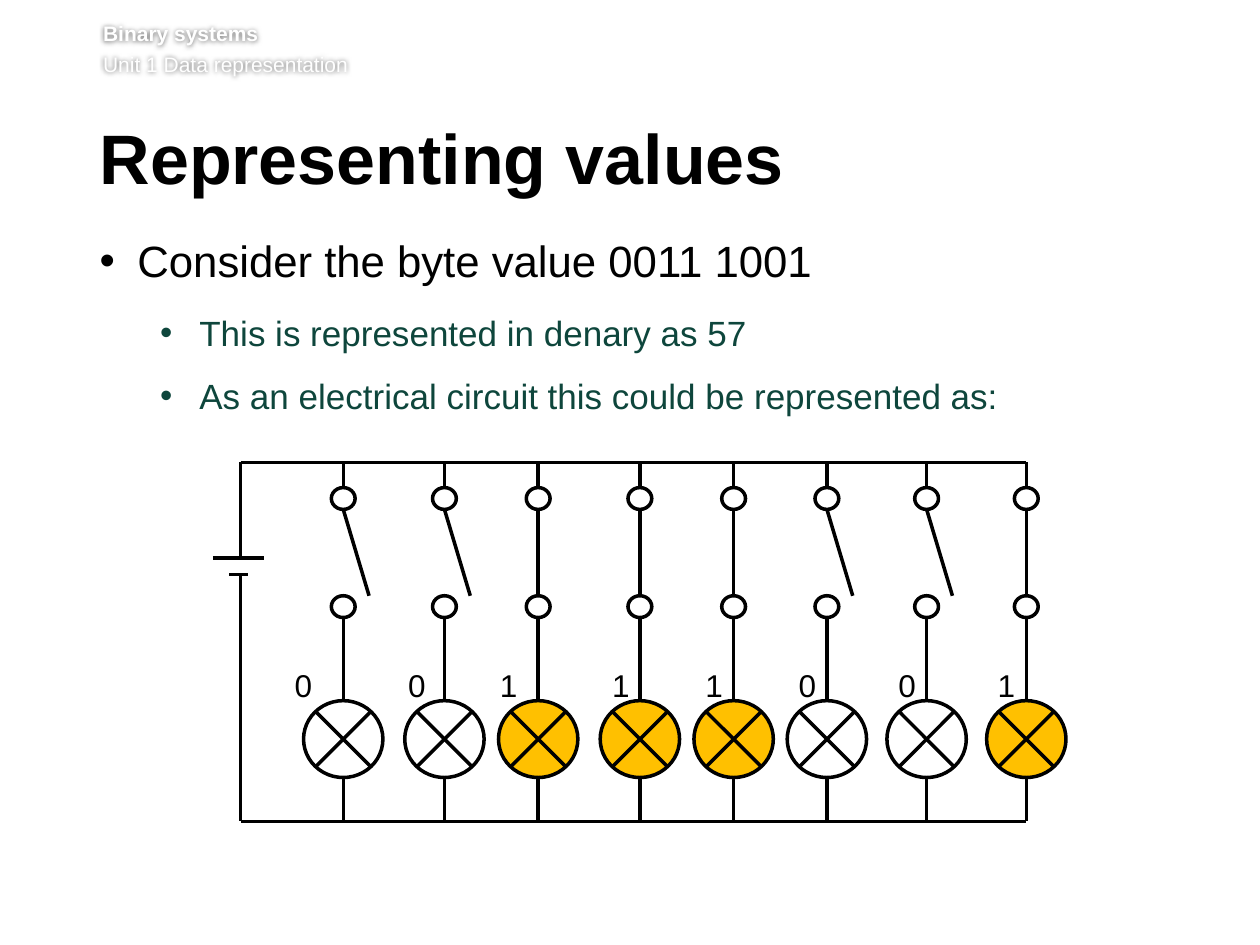
from collections import namedtuple

from lxml import etree
from pptx import Presentation
from pptx.dml.color import RGBColor
from pptx.enum.shapes import MSO_CONNECTOR, MSO_SHAPE
from pptx.enum.text import MSO_ANCHOR
from pptx.oxml import parse_xml
from pptx.oxml.ns import nsdecls, qn
from pptx.util import Cm, Pt

STRAIGHT = MSO_CONNECTOR.STRAIGHT
OVAL = MSO_SHAPE.OVAL
BOTTOM = MSO_ANCHOR.BOTTOM

Theme = namedtuple("Theme", "font black white green lit header title body detail digit line")
theme = Theme(
    font="Arial",
    black=RGBColor(0x00, 0x00, 0x00),
    white=RGBColor(0xFF, 0xFF, 0xFF),
    green=RGBColor(0x0E, 0x46, 0x3C),
    lit=RGBColor(0xFF, 0xC0, 0x00),
    header=Pt(12), title=Pt(40), body=Pt(25), detail=Pt(20), digit=Pt(18), line=Pt(2),
)


def add_run(paragraph, text, size, color, bold=False):
    run = paragraph.add_run()
    run.text = text
    run.font.name = theme.font
    run.font.size = size
    run.font.bold = bold
    run.font.color.rgb = color


def add_wire(x1, y1, x2, y2):
    """Draw a black line in the circuit group, with coordinates in centimetres."""
    wire = circuit.shapes.add_connector(STRAIGHT, Cm(x1), Cm(y1), Cm(x2), Cm(y2))
    wire.line.color.rgb = theme.black
    wire.line.width = theme.line
    etree.SubElement(wire._element.spPr, qn("a:effectLst"))


presentation = Presentation()
presentation.slide_width = Cm(25.4)
presentation.slide_height = Cm(19.05)
slide = presentation.slides.add_slide(presentation.slide_layouts[6])

# Header: white text with a soft dark halo
header = slide.shapes.add_textbox(Cm(2.08), Cm(0.43), Cm(22.4), Cm(1.24))
header.text_frame.word_wrap = True
header.text_frame.vertical_anchor = BOTTOM
header.text_frame.margin_left = header.text_frame.margin_right = 0
header.text_frame.margin_top = 0
header.text_frame.margin_bottom = Cm(0.13)
paragraph = header.text_frame.paragraphs[0]
add_run(paragraph, "Binary systems", theme.header, theme.white, bold=True)
paragraph = header.text_frame.add_paragraph()
paragraph.space_before = Pt(2.9)
add_run(paragraph, "Unit 1 Data representation", theme.header, theme.white)
header._element.spPr.append(parse_xml(
    f'<a:effectLst {nsdecls("a")}><a:outerShdw blurRad="38100" dist="0" dir="0">'
    '<a:srgbClr val="000000"><a:alpha val="60000"/></a:srgbClr>'
    '</a:outerShdw></a:effectLst>'))

# Title
title = slide.shapes.add_textbox(Cm(2.01), Cm(2.51), Cm(21.72), Cm(1.85))
title.text_frame.word_wrap = True
title.text_frame.margin_left = 0
paragraph = title.text_frame.paragraphs[0]
paragraph.line_spacing = Pt(39)
paragraph.space_after = Pt(15)
add_run(paragraph, "Representing values", theme.title, theme.black, bold=True)

# Bullets: text, level, indent, hanging, space after, size, colour
bullets = [
    ("Consider the byte value 0011 1001", 0, 0.76, 0.76, 14, theme.body, theme.black),
    ("This is represented in denary as 57", 1, 2.01, 0.79, 12, theme.detail, theme.green),
    ("As an electrical circuit this could be represented as:",
     1, 2.01, 0.79, 12, theme.detail, theme.green),
]
body = slide.shapes.add_textbox(Cm(2.01), Cm(4.72), Cm(21.67), Cm(9.6))
body.text_frame.word_wrap = True
body.text_frame.margin_left = body.text_frame.margin_top = 0
for index, (text, level, indent, hanging, after, size, color) in enumerate(bullets):
    paragraph = body.text_frame.add_paragraph() if index else body.text_frame.paragraphs[0]
    paragraph.level = level
    paragraph.space_after = Pt(after)
    properties = paragraph._p.get_or_add_pPr()
    properties.set("marL", str(Cm(indent)))
    properties.set("indent", str(-Cm(hanging)))
    etree.SubElement(properties, qn("a:buFont"), typeface=theme.font)
    etree.SubElement(properties, qn("a:buChar"), char="•")
    add_run(paragraph, text, size, color)

# Circuit: all measures below are in centimetres
circuit = slide.shapes.add_group_shape()
battery_x = 4.85
top_rail, bottom_rail = 9.32, 16.56
plate_top, plate_bottom = 11.25, 11.58
upper_terminal, lower_terminal, lamp_y = 10.05, 12.23, 14.9
terminal_width, terminal_height = 0.48, 0.44
lamp_width, lamp_height = 1.6, 1.55
cross = 0.56
switch_swing = 0.52

# Each branch: bit, centre, left edge of its digit
branches = [
    ("0", 6.92, 5.69), ("0", 8.96, 7.98), ("1", 10.85, 9.83), ("1", 12.9, 12.09),
    ("1", 14.79, 13.97), ("0", 16.67, 15.85), ("0", 18.68, 17.86), ("1", 20.69, 19.86),
]
last_x = branches[-1][1]

add_wire(battery_x, top_rail, last_x, top_rail)
add_wire(battery_x, bottom_rail, last_x, bottom_rail)
add_wire(battery_x, top_rail, battery_x, plate_top)
add_wire(battery_x, plate_bottom, battery_x, bottom_rail)
add_wire(4.29, plate_top, 5.33, plate_top)
add_wire(4.62, plate_bottom, 5.0, plate_bottom)

for bit, x, digit_left in branches:
    is_on = bit == "1"
    terminal_edge = terminal_height / 2
    lamp_edge = lamp_height / 2

    add_wire(x, top_rail, x, upper_terminal - terminal_edge)
    add_wire(x, upper_terminal + terminal_edge,
             x if is_on else x + switch_swing, lower_terminal - terminal_edge)
    add_wire(x, lower_terminal + terminal_edge, x, lamp_y - lamp_edge)
    add_wire(x, lamp_y + lamp_edge, x, bottom_rail)

    for y, width, height, fill in (
        (upper_terminal, terminal_width, terminal_height, theme.white),
        (lower_terminal, terminal_width, terminal_height, theme.white),
        (lamp_y, lamp_width, lamp_height, theme.lit if is_on else theme.white),
    ):
        circle = circuit.shapes.add_shape(
            OVAL, Cm(x - width / 2), Cm(y - height / 2), Cm(width), Cm(height))
        circle.shadow.inherit = False
        circle.fill.solid()
        circle.fill.fore_color.rgb = fill
        circle.line.color.rgb = theme.black
        circle.line.width = theme.line

    add_wire(x - cross, lamp_y - cross, x + cross, lamp_y + cross)
    add_wire(x + cross, lamp_y - cross, x - cross, lamp_y + cross)

    digit = circuit.shapes.add_textbox(Cm(digit_left), Cm(13.3), Cm(0.86), Cm(1.02))
    digit.text_frame.word_wrap = False
    add_run(digit.text_frame.paragraphs[0], bit, theme.digit, theme.black)

presentation.save("out.pptx")
